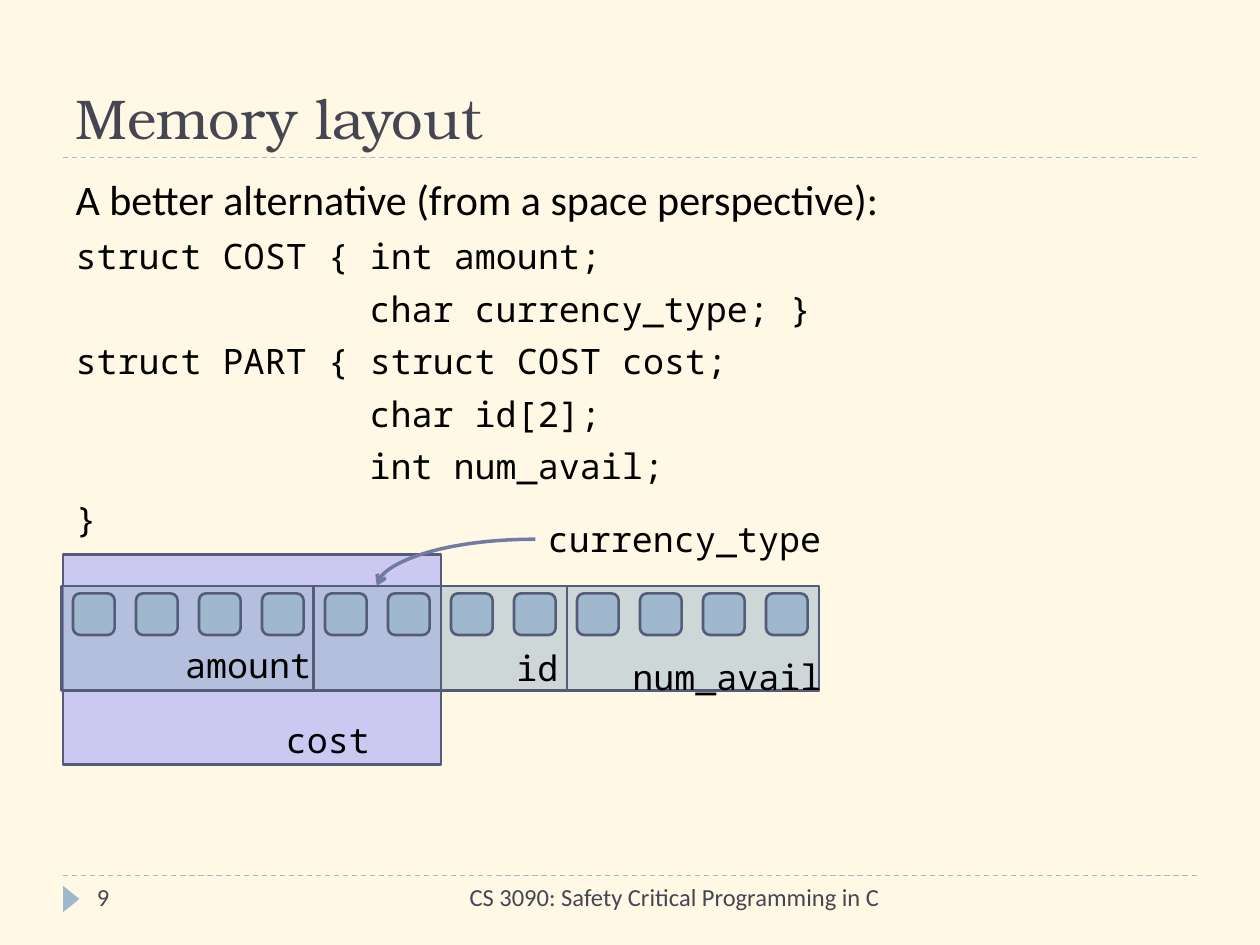
from lxml import etree
from pptx import Presentation
from pptx.dml.color import RGBColor
from pptx.enum.dml import MSO_LINE
from pptx.enum.shapes import MSO_CONNECTOR, MSO_SHAPE
from pptx.enum.text import MSO_ANCHOR, MSO_AUTO_SIZE, PP_ALIGN
from pptx.oxml.ns import qn
from pptx.util import Inches, Pt

RECT, ROUND = MSO_SHAPE.RECTANGLE, MSO_SHAPE.ROUNDED_RECTANGLE
TRI = MSO_SHAPE.ISOSCELES_TRIANGLE
LINE, CURVE = MSO_CONNECTOR.STRAIGHT, MSO_CONNECTOR.CURVE
DASH, BOTTOM = MSO_LINE.DASH, MSO_ANCHOR.BOTTOM
LEFT, RIGHT = PP_ALIGN.LEFT, PP_ALIGN.RIGHT
FIXED, GROW = MSO_AUTO_SIZE.NONE, MSO_AUTO_SIZE.SHAPE_TO_FIT_TEXT

SANS, MONO, SERIF = "Calibri", "Noto Sans Mono", "TeX Gyre Bonum"
CREAM, INK, BLACK = "FEF8E4", "464653", "000000"
BLUE, EDGE, ARROW, LILAC = "9FB8CD", "545C79", "727CA3", "9999FF"

TITLE = "Memory layout"
LEAD = "A better alternative (from a space perspective):"
CODE = [
    (0, "struct COST { int amount;"),
    (14, "char currency_type; }"),
    (0, "struct PART { struct COST cost;"),
    (14, "char id[2];"),
    (14, "int num_avail;"),
    (0, "}"),
]
FIELDS = [(4.5, 2), (2.49, 1.01), (0.49, 2), (3.5, 1)]
LABELS = [
    ("id", 4, 5.08, 0.54),
    ("amount", 1.37, 5.06, 1.21),
    ("num_avail", 4.92, 5.15, 1.72),
    ("cost", 2.17, 5.65, 0.88),
    ("currency_type", 4.25, 4.06, 2.39),
]
FOOTER = [
    ("CS 3090: Safety Critical Programming in C", 3.17, 3.91, RIGHT),
    ("9", 0.67, 2.17, LEFT),
]
BYTES, STEP, CHAR = 12, 0.5, 12 / 72


def color(text):
    return RGBColor.from_string(text)


def place(shape, *box):
    shape.left, shape.top, shape.width, shape.height = map(Inches, box)


def write(para, text, size, face, ink, align=LEFT):
    para.alignment = align
    run = para.add_run()
    run.text = text
    font = run.font
    font.size, font.name = Pt(size), face
    font.color.rgb = color(ink)


def block(kind, box, fill, edge=EDGE, alpha=None):
    shape = slide.shapes.add_shape(kind, *map(Inches, box))
    shape.shadow.inherit = False
    shape.fill.solid()
    shape.fill.fore_color.rgb = color(fill)
    if alpha:
        tint = shape.fill._xPr.find(".//" + qn("a:srgbClr"))
        etree.SubElement(tint, qn("a:alpha")).set("val", str(alpha * 1000))
    if edge:
        shape.line.color.rgb = color(edge)
        shape.line.width = Pt(1.5)
    else:
        shape.line.fill.background()
    return shape


def link(kind, ends, ink, width):
    line = slide.shapes.add_connector(kind, *map(Inches, ends))
    line.line.color.rgb = color(ink)
    line.line.width = Pt(width)
    etree.SubElement(line._element.spPr, qn("a:effectLst"))
    return line


def label(box, text, size, face, ink, align=LEFT, grow=False):
    frame = slide.shapes.add_textbox(*map(Inches, box)).text_frame
    frame.word_wrap = not grow
    frame.auto_size = GROW if grow else FIXED
    write(frame.paragraphs[0], text, size, face, ink, align)


deck = Presentation()
deck.slide_width, deck.slide_height = Inches(10), Inches(7.5)
slide = deck.slides.add_slide(deck.slide_layouts[1])
slide.background.fill.solid()
slide.background.fill.fore_color.rgb = color(CREAM)

title, body = slide.placeholders
place(title, 0.5, 0.17, 9, 1.08)
title.text_frame.auto_size = FIXED
title.text_frame.vertical_anchor = BOTTOM
write(title.text_frame.paragraphs[0], TITLE, 32, SERIF, INK)

place(body, 0.5, 1.33, 9, 5.4)
frame = body.text_frame
frame.auto_size = FIXED
rows = [(0, LEAD, 24, SANS)] + [(pad, text, 20, MONO) for pad, text in CODE]
for i, (pad, text, size, face) in enumerate(rows):
    para = frame.add_paragraph() if i else frame.paragraphs[0]
    write(para, text, size, face, BLACK)
    para.space_before = Pt(6)
    props = para._p.get_or_add_pPr()
    props.set("marL", str(Inches(0.3 + pad * CHAR)))
    props.set("indent", str(Inches(-0.3)))
    etree.SubElement(props, qn("a:buNone"))

for y in (6.95, 1.25):
    link(LINE, (0.5, y, 9.5, y), BLUE, 0.75).line.dash_style = DASH
block(TRI, (0.46, 7.07, 0.21, 0.13), BLUE, None).rotation = 90
for text, x, wide, align in FOOTER:
    label((x, 6.95, wide, 0.4), text, 14, SANS, INK, align)

block(RECT, (0.5, 4.4, 3, 1.67), LILAC, alpha=50)
for x, wide in FIELDS:
    block(RECT, (x, 4.65, wide, 0.83), BLUE, alpha=50)
for i in range(BYTES):
    block(ROUND, (0.58 + i * STEP, 4.71, 0.33, 0.33), BLUE)
for text, x, y, wide in LABELS:
    label((x, y, wide, 0.44), text, 20, MONO, BLACK, grow=True)

arrow = link(CURVE, (4.25, 4.28, 2.99, 4.65), ARROW, 2)
shape = arrow._element.spPr
shape.find(qn("a:prstGeom")).set("prst", "curvedConnector2")
etree.SubElement(shape.find(qn("a:ln")), qn("a:tailEnd")).set("type", "arrow")

deck.save("out.pptx")
